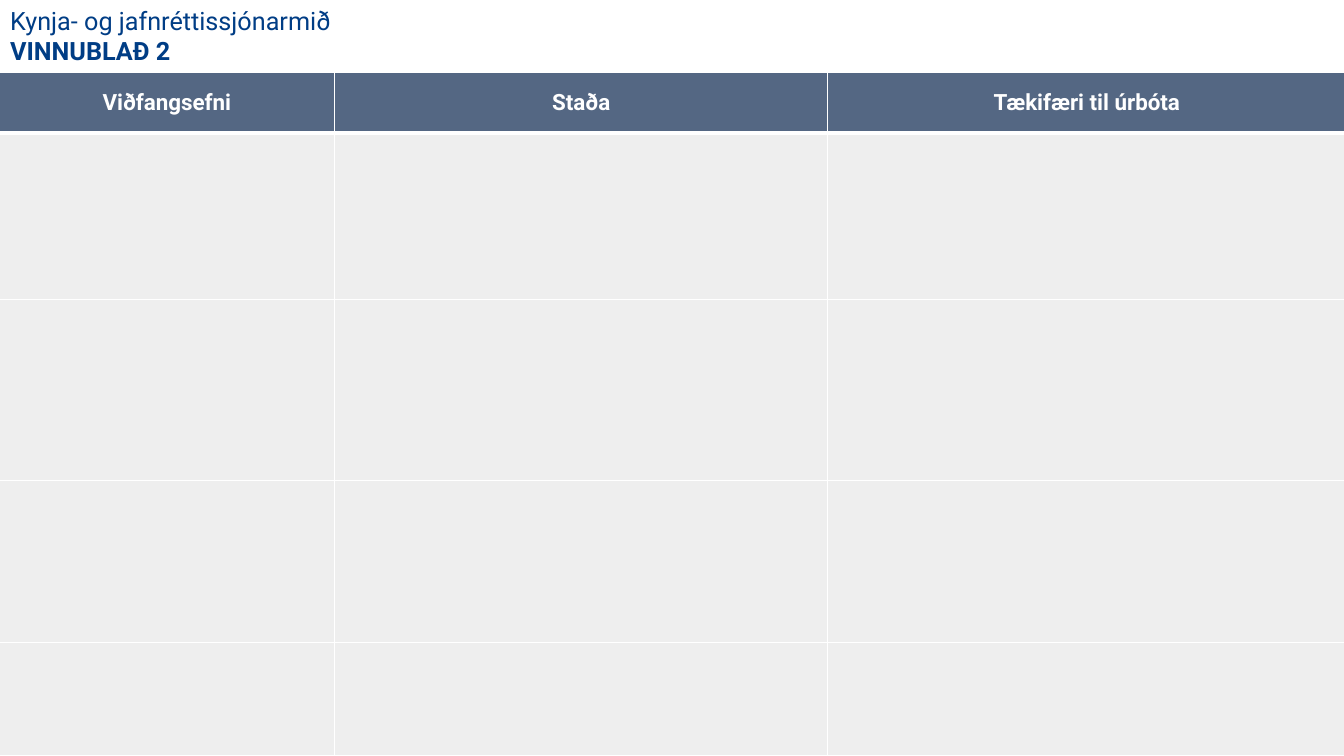
import lxml.etree
import pptx
import pptx.dml.color
import pptx.enum.text
import pptx.oxml.ns
import pptx.util

Inches = pptx.util.Inches
Pt = pptx.util.Pt
COLORS = {"title": "003D85", "header": "546783", "body": "EEEEEE", "white": "FFFFFF"}
HEADINGS = ["Viðfangsefni", "Staða", "Tækifæri til úrbóta"]
COLUMN_WIDTHS = [3.33, 4.89, 5.14]
ROW_HEIGHTS = [0.6, 1.65, 1.8, 1.6, 1.13]


class Worksheet:
    font = "Roboto"

    def __init__(self, slide):
        self.slide = slide

    def color(self, name):
        return pptx.dml.color.RGBColor.from_string(COLORS[name])

    def apply(self, target, values):
        for key, value in values.items():
            setattr(target, key, value)

    def add_text(self, paragraph, text, size, color, bold, align):
        paragraph.alignment = align
        run = paragraph.add_run()
        run.text = text
        self.apply(run.font, {"name": self.font, "size": Pt(size), "bold": bold})
        run.font.color.rgb = self.color(color)

    def title(self, lines, left, top, width, height):
        heading = self.slide.shapes.title
        self.apply(heading, {"left": Inches(left), "top": Inches(top),
                             "width": Inches(width), "height": Inches(height)})
        frame = heading.text_frame
        self.apply(frame, {"word_wrap": True,
                           "vertical_anchor": pptx.enum.text.MSO_ANCHOR.TOP,
                           "auto_size": pptx.enum.text.MSO_AUTO_SIZE.SHAPE_TO_FIT_TEXT})
        for index, (text, bold) in enumerate(lines):
            paragraph = frame.add_paragraph() if index else frame.paragraphs[0]
            self.add_text(paragraph, text, 18, "title", bold, pptx.enum.text.PP_ALIGN.LEFT)

    def border(self, cell, side, width):
        qn = pptx.oxml.ns.qn
        properties = cell._tc.get_or_add_tcPr()
        line = lxml.etree.SubElement(properties, qn(f"a:ln{side}"), w=str(Pt(width)))
        fill = lxml.etree.SubElement(line, qn("a:solidFill"))
        lxml.etree.SubElement(fill, qn("a:srgbClr"), val=COLORS["white"])

    def style_cell(self, cell, row):
        widths = {"L": 1, "R": 1, "T": 3 if row == 1 else 1, "B": 3 if row == 0 else 1}
        for side, width in widths.items():
            self.border(cell, side, width)
        cell.fill.solid()
        cell.fill.fore_color.rgb = self.color("body" if row else "header")
        self.apply(cell, {"margin_left": Inches(0.07), "margin_right": Inches(0.07),
                          "margin_top": Inches(0.04), "margin_bottom": Inches(0.04),
                          "vertical_anchor": pptx.enum.text.MSO_ANCHOR.MIDDLE})

    def table(self, headings, widths, heights, left, top):
        grid = self.slide.shapes.add_table(
            len(heights), len(widths), Inches(left), Inches(top),
            Inches(sum(widths)), Inches(sum(heights))).table
        for column, width in zip(grid.columns, widths):
            column.width = Inches(width)
        for index, height in enumerate(heights):
            grid.rows[index].height = Inches(height)
            for cell in grid.rows[index].cells:
                self.style_cell(cell, index)
        for cell, text in zip(grid.rows[0].cells, headings):
            self.add_text(cell.text_frame.paragraphs[0], text, 16, "white", True,
                          pptx.enum.text.PP_ALIGN.CENTER)


def main():
    presentation = pptx.Presentation()
    presentation.slide_width = Inches(13.33)
    presentation.slide_height = Inches(7.5)
    worksheet = Worksheet(presentation.slides.add_slide(presentation.slide_layouts[5]))
    worksheet.title([("Kynja- og jafnréttissjónarmið", False), ("VINNUBLAÐ 2", True)],
                    0, 0, 5.6, 0.71)
    worksheet.table(HEADINGS, COLUMN_WIDTHS, ROW_HEIGHTS, -0.01, 0.72)
    presentation.save("out.pptx")


if __name__ == "__main__":
    main()
